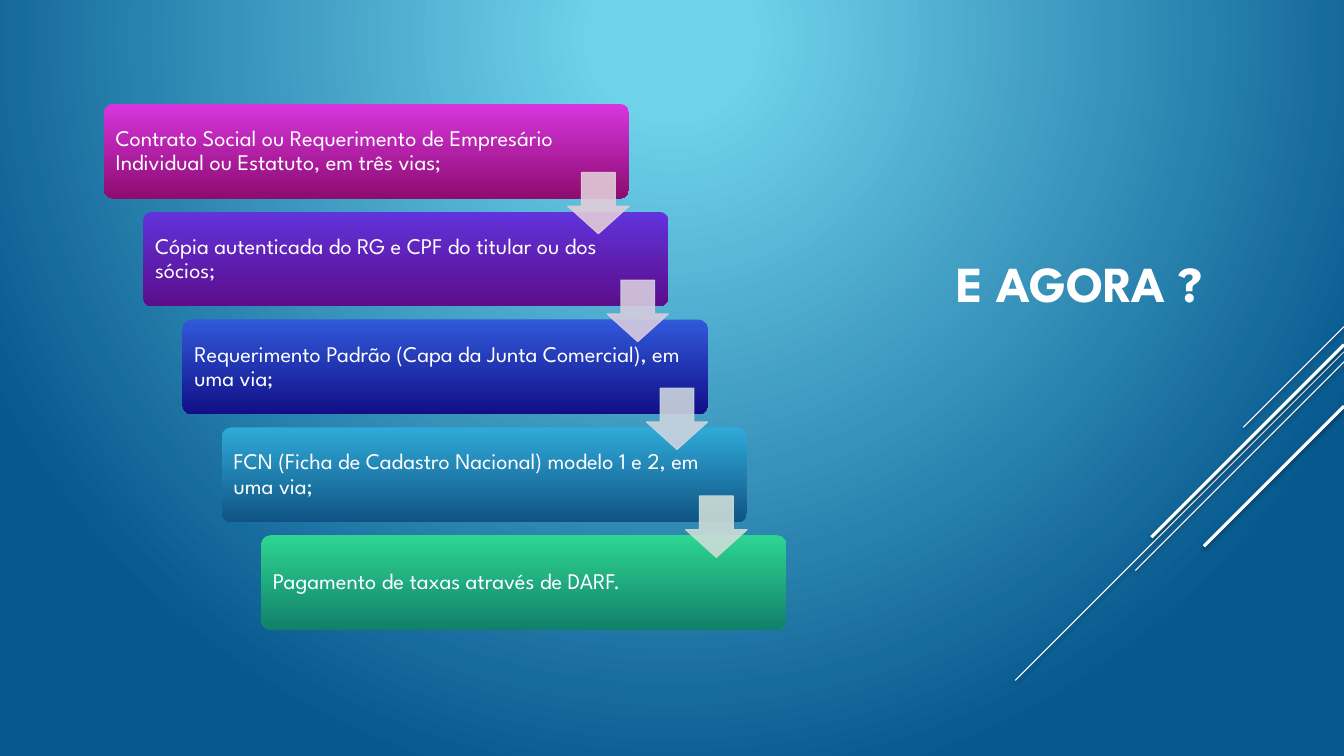
from dataclasses import dataclass

from lxml.etree import SubElement
from pptx import Presentation
from pptx.dml.color import RGBColor
from pptx.enum.shapes import MSO_CONNECTOR, MSO_SHAPE
from pptx.enum.text import MSO_ANCHOR
from pptx.oxml.ns import qn
from pptx.shapes.autoshape import Shape
from pptx.slide import Slide
from pptx.util import Inches, Pt

WIDTH, HEIGHT = 13.33, 7.5
COLUMN, ROW = 0.39, 1.07
FIRST_LEFT, FIRST_TOP = 1.03, 1.03
BOX_WIDTH, BOX_HEIGHT = 5.21, 0.94
ARROW_SIZE, ARROW_DROP = 0.61, 0.68
FONT = "League Spartan"
WHITE = "FFFFFF"


@dataclass
class Step:
    text: str
    top_color: str
    bottom_color: str
    arrow_color: str | None = None


@dataclass
class Ray:
    """A diagonal from the right edge, falling as far as it runs left."""
    top: float
    reach: float
    weight: float


STEPS = [
    Step("Contrato Social ou Requerimento de Empresário Individual ou Estatuto, em três vias;",
         "D835DF", "8D0C6F", "E1CCD8"),
    Step("Cópia autenticada do RG e CPF do titular ou dos sócios;",
         "6233DC", "5B0D8A", "D6CCDF"),
    Step("Requerimento Padrão (Capa da Junta Comercial), em uma via;",
         "3159DA", "110F87", "CCD4DE"),
    Step("FCN (Ficha de Cadastro Nacional) modelo 1 e 2, em uma via;",
         "2FAAD8", "105484", "CCDDD8"),
    Step("Pagamento de taxas através de DARF.", "2ED592", "11806A"),
]
RAYS = [
    Ray(3.24, 1.0, 0.75),
    Ray(3.49, 3.26, 0.75),
    Ray(3.59, 2.07, 0.75),
    Ray(3.42, 1.91, 2.25),
    Ray(4.03, 1.39, 2.25),
]


def color(value: str) -> RGBColor:
    return RGBColor.from_string(value)


def add_block(page: Slide, kind: MSO_SHAPE, left: float, top: float,
              width: float, height: float) -> Shape:
    """Add a preset shape with neither shadow nor outline."""
    block = page.shapes.add_shape(kind, Inches(left), Inches(top), Inches(width), Inches(height))
    block.shadow.inherit = False
    block.line.fill.background()
    return block


def fill_gradient(block: Shape, start: str, end: str) -> None:
    block.fill.gradient()
    block.fill.gradient_angle = 270
    for stop, value in zip(block.fill.gradient_stops, (start, end)):
        stop.color.rgb = color(value)
    block.fill.gradient_stops[0].position = 0
    block.fill.gradient_stops[1].position = 1


def add_text(box: Shape, text: str, size: float, space_after: float,
             line_spacing: float = 1.0, bold: bool = False) -> None:
    frame = box.text_frame
    frame.word_wrap = True
    frame.vertical_anchor = MSO_ANCHOR.MIDDLE
    para = frame.paragraphs[0]
    para.alignment = 1
    para.space_after = Pt(space_after)
    para.line_spacing = line_spacing
    span = para.add_run()
    span.text = text
    span.font.name = FONT
    span.font.size = Pt(size)
    span.font.bold = bold
    span.font.color.rgb = color(WHITE)


def add_backdrop(page: Slide) -> None:
    """Cover the page with a glow that spreads from the top centre."""
    backdrop = add_block(page, MSO_SHAPE.RECTANGLE, 0, 0, WIDTH, HEIGHT)
    fill_gradient(backdrop, "6ED2EB", "06588E")
    backdrop.fill.gradient_stops[0].position = 0.1
    gradient = backdrop._element.spPr.find(qn("a:gradFill"))
    gradient.remove(gradient.find(qn("a:lin")))
    glow = SubElement(gradient, qn("a:path"), {"path": "circle"})
    SubElement(glow, qn("a:fillToRect"),
               {"l": "50000", "t": "5000", "r": "50000", "b": "95000"})


def add_ray(page: Slide, ray: Ray) -> None:
    line = page.shapes.add_connector(
        MSO_CONNECTOR.STRAIGHT, Inches(WIDTH), Inches(ray.top),
        Inches(WIDTH - ray.reach), Inches(ray.top + ray.reach))
    line.line.color.rgb = color(WHITE)
    line.line.width = Pt(ray.weight)
    effects = SubElement(line._element.spPr, qn("a:effectLst"))
    shadow = SubElement(effects, qn("a:outerShdw"), {
        "blurRad": str(Pt(3.1)), "dist": str(Pt(1.6)), "dir": "5400000", "rotWithShape": "0"})
    tint = SubElement(shadow, qn("a:srgbClr"), {"val": "000000"})
    SubElement(tint, qn("a:alpha"), {"val": "38000"})


def add_title(page: Slide) -> None:
    title = page.shapes.add_textbox(Inches(9.39), Inches(1.03), Inches(3.33), Inches(3.55))
    add_text(title, "E AGORA ?", 36, 6, bold=True)


def add_step(page: Slide, step: Step, index: int) -> None:
    box = add_block(page, MSO_SHAPE.ROUNDED_RECTANGLE, FIRST_LEFT + index * COLUMN,
                    FIRST_TOP + index * ROW, BOX_WIDTH, BOX_HEIGHT)
    box.adjustments[0] = 0.1
    fill_gradient(box, step.top_color, step.bottom_color)
    frame = box.text_frame
    frame.margin_left = frame.margin_top = frame.margin_bottom = Inches(0.09)
    frame.margin_right = Inches(0.07)
    add_text(box, step.text, 16, 5.6, line_spacing=0.9)


def add_arrow(page: Slide, value: str, index: int) -> None:
    """Add the arrow that leads from one step down to the next."""
    left = FIRST_LEFT + index * COLUMN + BOX_WIDTH - ARROW_SIZE
    top = FIRST_TOP + index * ROW + ARROW_DROP
    arrow = add_block(page, MSO_SHAPE.DOWN_ARROW, left, top, ARROW_SIZE, ARROW_SIZE)
    arrow.adjustments[0] = 0.55
    arrow.adjustments[1] = 0.45
    arrow.line.width = Pt(0.75)
    for paint in (arrow.fill, arrow.line.fill):
        paint.solid()
        paint.fore_color.rgb = color(value)
    for tint in arrow._element.spPr.iter(qn("a:srgbClr")):
        SubElement(tint, qn("a:alpha"), {"val": "90000"})


def main() -> None:
    deck = Presentation()
    deck.slide_width, deck.slide_height = Inches(WIDTH), Inches(HEIGHT)
    page = deck.slides.add_slide(deck.slide_layouts[6])
    add_backdrop(page)
    for ray in RAYS:
        add_ray(page, ray)
    add_title(page)
    for index, step in enumerate(STEPS):
        add_step(page, step, index)
    for index, step in enumerate(STEPS):
        if step.arrow_color:
            add_arrow(page, step.arrow_color, index)
    deck.save("out.pptx")


if __name__ == "__main__":
    main()
